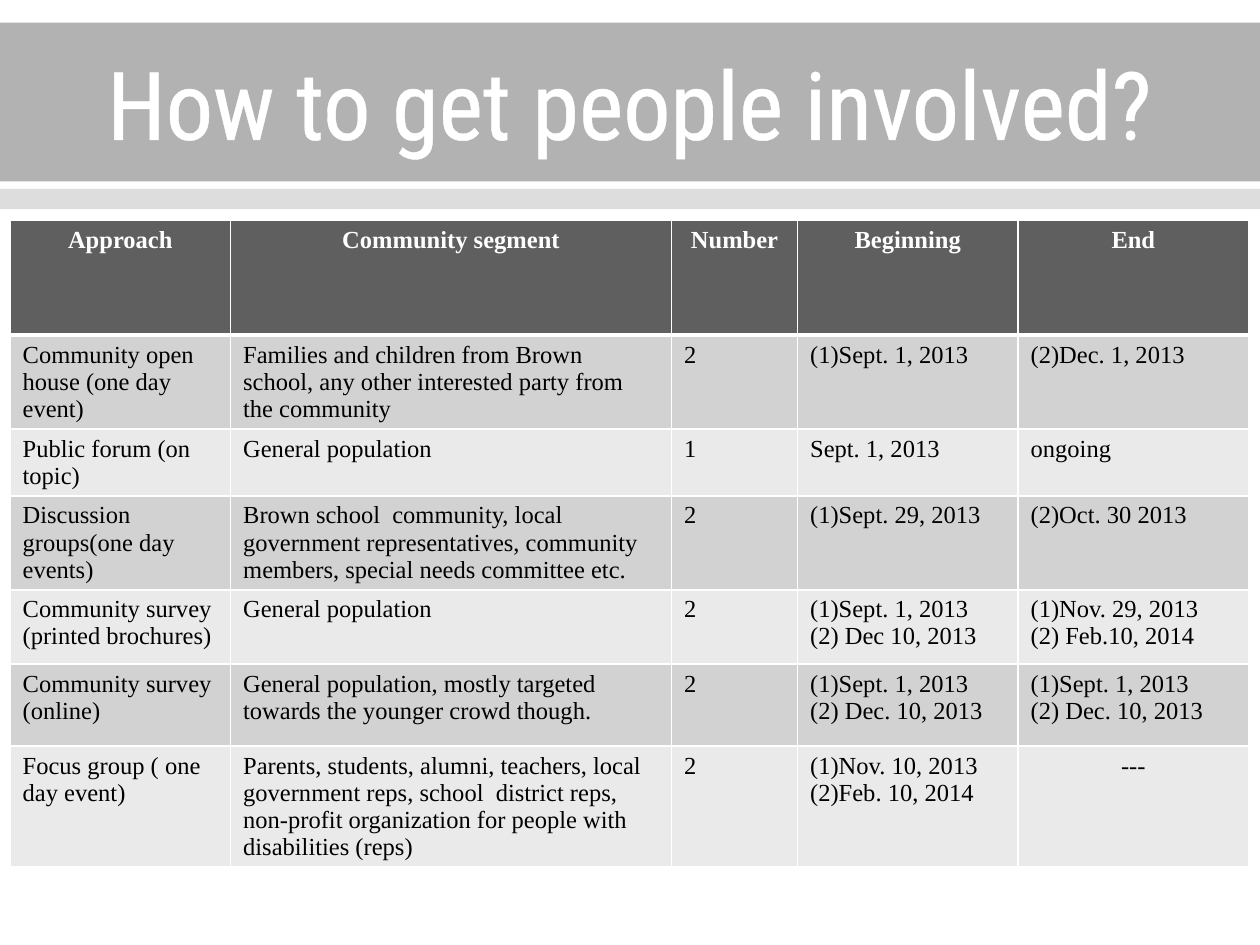
"""Build the slide on how to get people involved, with its outreach schedule."""
from lxml import etree
from pptx import Presentation
from pptx import util as u
from pptx.dml.color import RGBColor
from pptx.enum import shapes, text
from pptx.oxml.ns import qn

TITLE = "How to get people involved?"
HEADINGS = ["Approach", "Community segment", "Number", "Beginning", "End"]
OUTREACH = [
    ("Community open house (one day event)",
     "Families and children from Brown school, any other interested party from the community",
     "2", "(1)Sept. 1, 2013", "(2)Dec. 1, 2013"),
    ("Public forum (on topic)", "General population", "1", "Sept. 1, 2013", "ongoing"),
    ("Discussion groups(one day events)",
     "Brown school  community, local government representatives, community members, "
     "special needs committee etc.",
     "2", "(1)Sept. 29, 2013", "(2)Oct. 30 2013"),
    ("Community survey (printed brochures)", "General population", "2",
     "(1)Sept. 1, 2013\n(2) Dec 10, 2013", "(1)Nov. 29, 2013\n(2) Feb.10, 2014"),
    ("Community survey (online)",
     "General population, mostly targeted towards the younger crowd though.", "2",
     "(1)Sept. 1, 2013\n(2) Dec. 10, 2013", "(1)Sept. 1, 2013\n(2) Dec. 10, 2013"),
    ("Focus group ( one day event)",
     "Parents, students, alumni, teachers, local government reps, school  district reps, "
     "non-profit organization for people with disabilities (reps)",
     "2", "(1)Nov. 10, 2013\n(2)Feb. 10, 2014", "---"),
]
COLUMN_WIDTHS = [1.75, 3.5, 1, 1.75, 1.83]
ROW_HEIGHTS = [0.91, 0.67, 0.34, 0.62, 0.59, 0.65, 0.8]
BANDS = [(0.18, 1.26, "band"), (1.5, 0.16, "strip")]

THEME = {
    "white": "FFFFFF", "ink": "000000", "band": "B2B2B2", "strip": "DDDDDD",
    "header": "5F5F5F", "rows": ("D2D2D2", "EAEAEA"),
    "title_font": "Roboto Condensed", "table_font": "Times New Roman",
    "title_size": 54, "table_size": 14,
    "title_outline": 1.1, "border": 1, "header_border": 3,
}


def write(frame, content, *, font, size, color, bold=False, align=text.PP_ALIGN.LEFT):
    """Fill a text frame with one paragraph for each line of content."""
    for index, line in enumerate(content.split("\n")):
        para = frame.add_paragraph() if index else frame.paragraphs[0]
        para.alignment = align
        span = para.add_run()
        span.text = line
        span.font.name, span.font.size, span.font.bold = font, u.Pt(size), bold
        span.font.color.rgb = RGBColor.from_string(color)


def add_line(parent, tag, width, position):
    """Insert a solid white line property into a cell or run."""
    line = etree.Element(qn(tag), w=str(u.Pt(width)))
    fill = etree.SubElement(line, qn("a:solidFill"))
    etree.SubElement(fill, qn("a:srgbClr"), val=THEME["white"])
    parent.insert(position, line)


def add_bands(slide):
    """Place the full-width bands behind the title."""
    for top, height, color in BANDS:
        band = slide.shapes.add_shape(
            shapes.MSO_SHAPE.RECTANGLE, 0, u.Inches(top), u.Inches(10), u.Inches(height))
        band.shadow.inherit = False
        band.fill.solid()
        band.fill.fore_color.rgb = RGBColor.from_string(THEME[color])
        band.line.fill.background()
        slide.shapes.title.element.addprevious(band.element)


def format_title(title):
    """Position the title and give it outlined letters."""
    title.left, title.top = u.Inches(0.5), u.Inches(0.2)
    title.width, title.height = u.Inches(9), u.Inches(1.22)
    title.text_frame.vertical_anchor = text.MSO_ANCHOR.MIDDLE
    write(title.text_frame, TITLE, font=THEME["title_font"], size=THEME["title_size"],
          color=THEME["white"], align=text.PP_ALIGN.CENTER)
    for properties in title.element.iter(qn("a:rPr")):
        add_line(properties, "a:ln", THEME["title_outline"], 0)


def format_cell(cell, content, row):
    """Write one schedule cell with its fill and borders."""
    header = row == 0
    centered = header or content == "---"
    write(cell.text_frame, content, font=THEME["table_font"], size=THEME["table_size"],
          color=THEME["white" if header else "ink"], bold=header,
          align=text.PP_ALIGN.CENTER if centered else text.PP_ALIGN.LEFT)
    cell.fill.solid()
    color = THEME["header"] if header else THEME["rows"][(row - 1) % 2]
    cell.fill.fore_color.rgb = RGBColor.from_string(color)
    thick_side = {0: "B", 1: "T"}.get(row)
    properties = next(cell.text_frame._txBody.getparent().iter(qn("a:tcPr")))
    for position, side in enumerate("LRTB"):
        width = THEME["header_border" if side == thick_side else "border"]
        add_line(properties, f"a:ln{side}", width, position)


def add_schedule(slide):
    """Add the outreach table."""
    rows = [HEADINGS, *OUTREACH]
    table = slide.shapes.add_table(
        len(rows), len(HEADINGS), u.Inches(0.08), u.Inches(1.75),
        u.Inches(sum(COLUMN_WIDTHS)), u.Inches(sum(ROW_HEIGHTS))).table
    for column, width in zip(table.columns, COLUMN_WIDTHS):
        column.width = u.Inches(width)
    for row, (entries, height) in enumerate(zip(rows, ROW_HEIGHTS)):
        table.rows[row].height = u.Inches(height)
        for column, content in enumerate(entries):
            format_cell(table.cell(row, column), content, row)


def main():
    """Assemble and save the deck."""
    deck = Presentation()
    deck.slide_width, deck.slide_height = u.Inches(10), u.Inches(7.5)
    slide = deck.slides.add_slide(deck.slide_layouts.get_by_name("Title Only"))
    add_bands(slide)
    format_title(slide.shapes.title)
    add_schedule(slide)
    deck.save("out.pptx")


if __name__ == "__main__":
    main()
